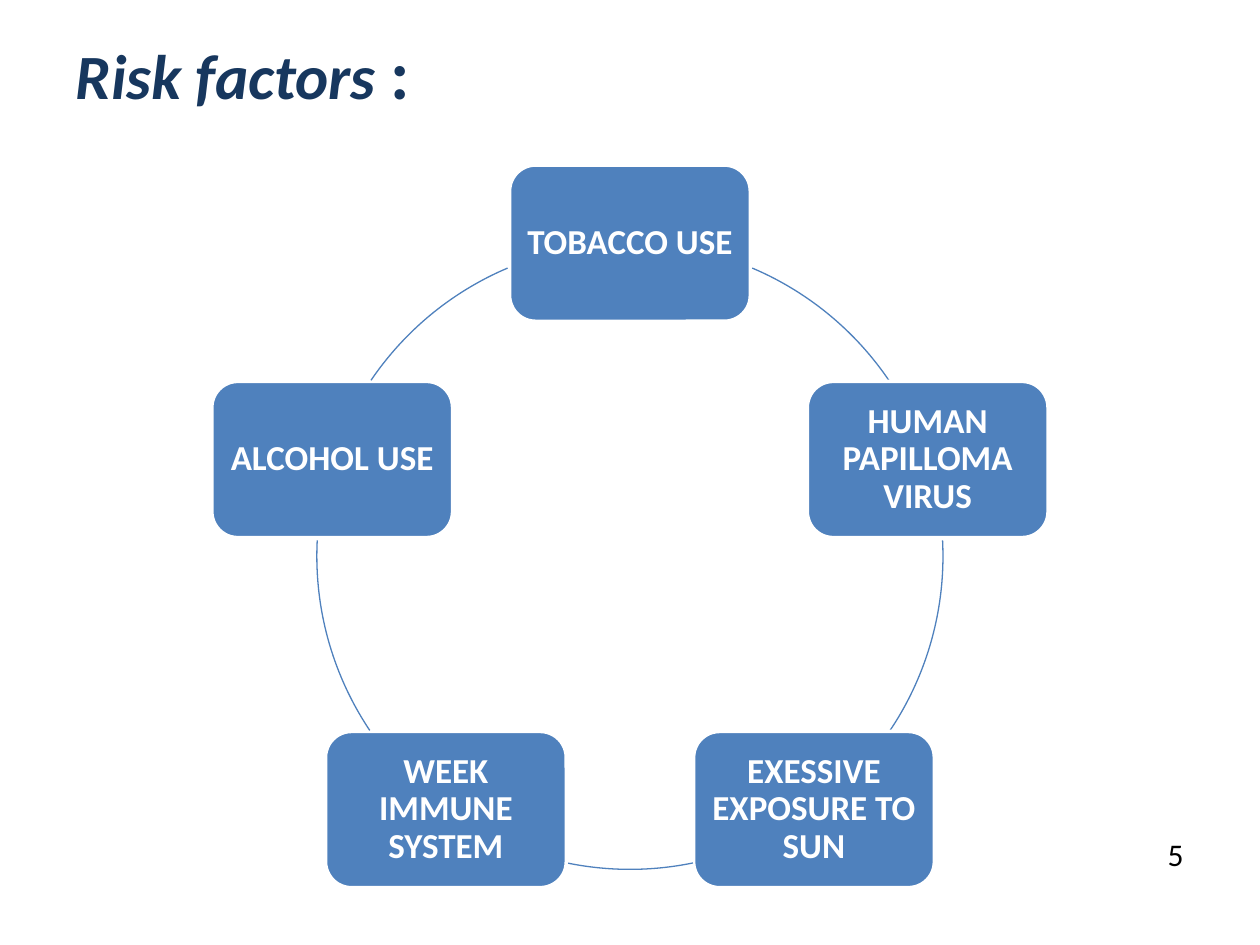
from math import cos, radians, sin

from pptx import Presentation
from pptx.dml.color import RGBColor
from pptx.enum.shapes import MSO_SHAPE
from pptx.enum.text import MSO_ANCHOR, PP_ALIGN
from pptx.util import Pt

FONT = "Calibri"
NAVY, BLUE, WHITE, BLACK = "17375E", "4F81BD", "FFFFFF", "000000"
CENTER_X, CENTER_Y, RADIUS = 360, 317.9, 178.9
BOX_WIDTH, BOX_HEIGHT = 137.6, 89.3
FACTORS = [
    "TOBACCO USE",
    "HUMAN PAPILLOMA VIRUS",
    "EXESSIVE EXPOSURE TO SUN",
    "WEEK IMMUNE SYSTEM",
    "ALCOHOL USE",
]
ARCS = [(293, 325.8), (357.1, 33.8), (78.4, 101.6), (146.2, 182.9), (214.2, 247)]


def color(value):
    """Turn a hex string into a colour."""
    return RGBColor.from_string(value)


def style_font(font, size, value, bold=False):
    """Set the face, size, colour and weight of a font."""
    font.name = FONT
    font.size = Pt(size)
    font.color.rgb = color(value)
    font.bold = bold


def add_title(page):
    """Fill and place the title, with an upright, larger colon."""
    title = page.shapes.title
    title.left, title.top, title.width, title.height = Pt(36), Pt(9.4), Pt(648), Pt(62.6)
    title.text_frame.vertical_anchor = MSO_ANCHOR.MIDDLE
    para = title.text_frame.paragraphs[0]
    para.alignment = PP_ALIGN.LEFT
    for text, size, italic in [("Risk factors ", 36, True), (":", 40, False)]:
        span = para.add_run()
        span.text = text
        style_font(span.font, size, NAVY, bold=True)
        span.font.italic = italic


def add_factor(page, text, angle):
    """Add a rounded box centred on the ring at an angle in degrees."""
    left = CENTER_X + RADIUS * cos(radians(angle)) - BOX_WIDTH / 2
    top = CENTER_Y + RADIUS * sin(radians(angle)) - BOX_HEIGHT / 2
    box = page.shapes.add_shape(
        MSO_SHAPE.ROUNDED_RECTANGLE, Pt(left), Pt(top), Pt(BOX_WIDTH), Pt(BOX_HEIGHT)
    )
    box.shadow.inherit = False
    box.fill.solid()
    box.fill.fore_color.rgb = color(BLUE)
    box.line.color.rgb = color(WHITE)
    box.line.width = Pt(2)
    frame = box.text_frame
    frame.word_wrap = True
    frame.vertical_anchor = MSO_ANCHOR.MIDDLE
    frame.margin_left = frame.margin_right = Pt(5)
    frame.margin_top = frame.margin_bottom = Pt(5)
    para = frame.paragraphs[0]
    para.text = text
    para.alignment = PP_ALIGN.CENTER
    para.line_spacing = 0.9
    style_font(para.font, 20, WHITE, bold=True)


def add_arc(page, start, end):
    """Add a piece of the ring between two angles in degrees."""
    arc = page.shapes.add_shape(
        MSO_SHAPE.ARC,
        Pt(CENTER_X - RADIUS),
        Pt(CENTER_Y - RADIUS),
        Pt(2 * RADIUS),
        Pt(2 * RADIUS),
    )
    arc.adjustments[0] = start * 0.6
    arc.adjustments[1] = end * 0.6
    arc.shadow.inherit = False
    arc.fill.background()
    arc.line.color.rgb = color(BLUE)
    arc.line.width = Pt(0.75)


def add_page_number(page, number):
    """Add the page number at the lower right."""
    box = page.shapes.add_textbox(Pt(660.2), Pt(473.8), Pt(45.4), Pt(28.8))
    box.text_frame.word_wrap = True
    para = box.text_frame.paragraphs[0]
    para.text = number
    style_font(para.font, 18, BLACK)


def main():
    """Build the slide and save it."""
    deck = Presentation()
    deck.slide_width, deck.slide_height = Pt(720), Pt(540)
    page = deck.slides.add_slide(deck.slide_layouts[5])
    add_title(page)
    step = 360 / len(FACTORS)
    for index, (text, (start, end)) in enumerate(zip(FACTORS, ARCS)):
        add_factor(page, text, index * step - 90)
        add_arc(page, start, end)
    add_page_number(page, "5")
    deck.save("out.pptx")


if __name__ == "__main__":
    main()
